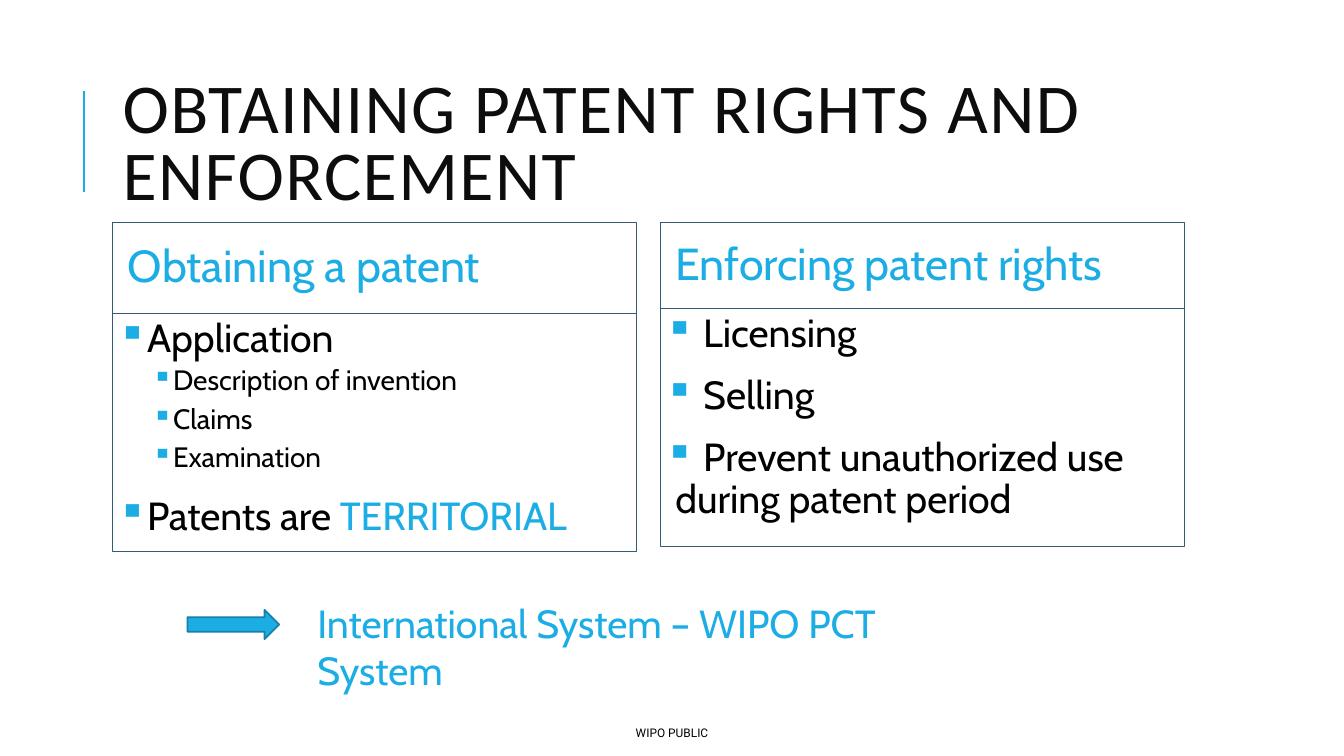
from lxml import etree
from pptx import Presentation, util as u
from pptx.dml.color import RGBColor
from pptx.enum import shapes, text
from pptx.oxml.ns import qn

HUES = {"sky": "1CADE4", "edge": "335B74", "rim": "1580A9",
        "ink": "000000", "title": "0D0D0D"}
MAIN = dict(size=28, left=7.2, hang=7.2, before=12, after=2, level=0)
SUB = dict(size=20, left=35.3, hang=10.8, before=2, after=4, level=1)


def color(name):
    return RGBColor.from_string(HUES[name])


def style(run, size, font, hue):
    run.font.size = u.Pt(size)
    run.font.name = font
    run.font.color.rgb = color(hue)


def setup(shape, side=7.2, edge=3.6, anchor=text.MSO_ANCHOR.TOP):
    frame = shape.text_frame
    frame.word_wrap = True
    frame.vertical_anchor = anchor
    frame.margin_left = frame.margin_right = u.Pt(side)
    frame.margin_top = frame.margin_bottom = u.Pt(edge)
    return frame


def label(slide, box, words, size, font, hue, **opts):
    shape = slide.shapes.add_textbox(*map(u.Pt, box))
    frame = setup(shape, **opts)
    frame.text = words
    para = frame.paragraphs[0]
    style(para.runs[0], size, font, hue)
    return para


def frame_box(slide, box):
    shape = slide.shapes.add_shape(shapes.MSO_SHAPE.RECTANGLE, *map(u.Pt, box))
    shape.shadow.inherit = False
    shape.fill.background()
    shape.line.color.rgb = color("edge")
    shape.line.width = u.Pt(0.75)
    return shape


def bullet(para, kind):
    para.level = kind["level"]
    para.space_before = u.Pt(kind["before"])
    para.space_after = u.Pt(kind["after"])
    props = para._p.get_or_add_pPr()
    props.set("marL", str(u.Pt(kind["left"])))
    props.set("indent", str(-u.Pt(kind["hang"])))
    tint = etree.SubElement(props, qn("a:buClr"))
    etree.SubElement(tint, qn("a:srgbClr"), val=HUES["sky"])
    etree.SubElement(props, qn("a:buChar"), char="▪")


def panel(slide, box, split, head, items):
    left, top, width, height = box
    frame = setup(frame_box(slide, (left, top, width, split)),
                  side=10.8, anchor=text.MSO_ANCHOR.MIDDLE)
    frame.text = head
    para = frame.paragraphs[0]
    para.alignment = text.PP_ALIGN.LEFT
    para.line_spacing = 0.9
    style(para.runs[0], 32, "Cabin", "sky")

    body = (left, top + split, width, height - split)
    frame = setup(frame_box(slide, body), side=3.6)
    for i, (kind, *parts) in enumerate(items):
        para = frame.add_paragraph() if i else frame.paragraphs[0]
        para.alignment = text.PP_ALIGN.LEFT
        para.line_spacing = 0.9
        bullet(para, kind)
        for part, hue in zip(parts, ("ink", "sky")):
            run = para.add_run()
            run.text = part
            style(run, kind["size"], "Cabin", hue)


def header(slide, box):
    left, top, width, height = box
    x = left - 20.6
    bar = slide.shapes.add_connector(
        shapes.MSO_CONNECTOR.STRAIGHT,
        *map(u.Pt, (x, top + 90.7, x, top + 18.7)))
    bar.line.color.rgb = color("sky")
    bar.line.width = u.Pt(1.5)
    etree.SubElement(bar._element.spPr, qn("a:effectLst"))
    para = label(slide, box, "OBTAINING PATENT RIGHTS AND ENFORCEMENT",
                 50, "Calibri", "title", anchor=text.MSO_ANCHOR.MIDDLE)
    para.line_spacing = 0.8
    para.runs[0]._r.get_or_add_rPr().set("spc", "100")


def callout(slide, box):
    left, top, width, height = box
    arrow = slide.shapes.add_shape(
        shapes.MSO_SHAPE.RIGHT_ARROW,
        *map(u.Pt, (left, top + 10.8, 65.5, 20.9)))
    arrow.shadow.inherit = False
    arrow.fill.solid()
    arrow.fill.fore_color.rgb = color("sky")
    arrow.line.color.rgb = color("rim")
    arrow.line.width = u.Pt(1.25)
    label(slide, (left + 85.7, top, width - 85.7, height),
          "International System – WIPO PCT System", 28, "Cabin", "sky")


def footer(slide, box):
    para = label(slide, box, "WIPO PUBLIC", 8.5, "Roboto", "ink")
    para.alignment = text.PP_ALIGN.CENTER


def main():
    deck = Presentation()
    deck.slide_width, deck.slide_height = u.Pt(960), u.Pt(540)
    slide = deck.slides.add_slide(deck.slide_layouts[6])
    header(slide, (80.6, 46.1, 765.4, 118.1))
    panel(slide, (80.6, 159.1, 374.4, 234.7), 64.8, "Obtaining a patent", [
        (MAIN, "Application"),
        (SUB, "Description of invention"),
        (SUB, "Claims"),
        (SUB, "Examination"),
        (MAIN, "Patents are ", "TERRITORIAL"),
    ])
    panel(slide, (471.6, 159.1, 374.4, 231.1), 61.2, "Enforcing patent rights", [
        (MAIN, " Licensing"),
        (MAIN, " Selling"),
        (MAIN, " Prevent unauthorized use during patent period"),
    ])
    callout(slide, (133.9, 424.8, 572.4, 41))
    footer(slide, (0, 514.8, 960, 17.3))
    deck.save("out.pptx")


if __name__ == "__main__":
    main()
